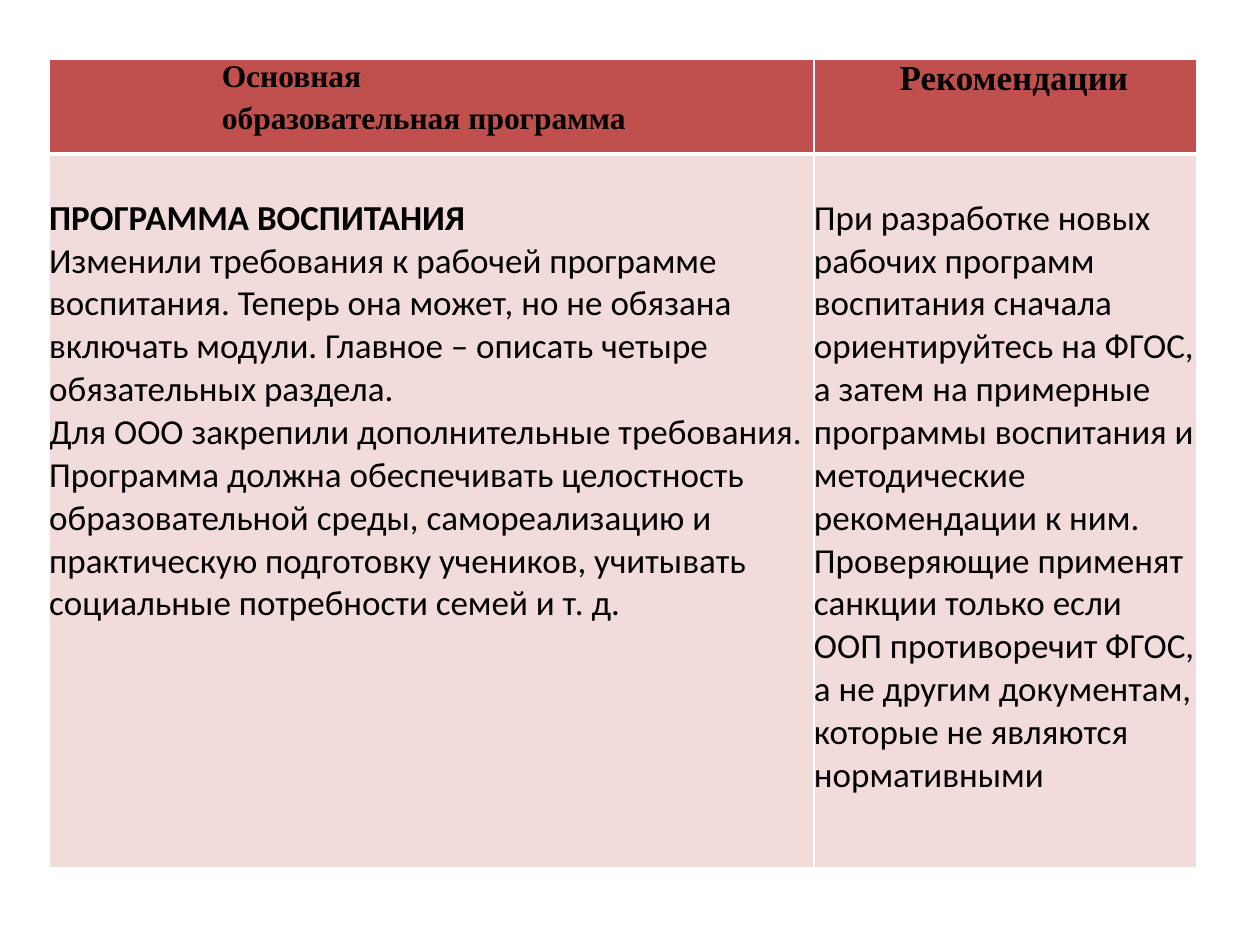
from lxml import etree
from pptx import Presentation
from pptx.dml.color import RGBColor
from pptx.enum.text import PP_ALIGN
from pptx.oxml.ns import qn
from pptx.util import Emu, Inches, Pt

LEFT, JUSTIFY = PP_ALIGN.LEFT, PP_ALIGN.JUSTIFY
WHITE, BLACK, RED, PINK = "FFFFFF", "000000", "C0504D", "F2DCDB"
SERIF, SANS = "Times New Roman", "Calibri"
THIN, THICK = 1, 3


def color(value):
    return RGBColor.from_string(value)


class SlideBuilder:
    """Holds the style and the current slide, and adds tables to it."""

    def __init__(self, deck):
        self.width, self.height = deck.slide_width, deck.slide_height
        self.slide = deck.slides.add_slide(deck.slide_layouts[6])

    def across(self, share):
        return Emu(round(self.width * share))

    def down(self, share):
        return Emu(round(self.height * share))

    def table(self, left, top, columns, rows):
        grid = self.slide.shapes.add_table(
            len(rows), len(columns), self.across(left), self.down(top),
            self.across(sum(columns)), self.down(sum(rows))).table
        for column, share in zip(grid.columns, columns):
            column.width = self.across(share)
        for row, share in zip(grid.rows, rows):
            row.height = self.down(share)
        return grid

    def border(self, cell, side, points):
        line = etree.SubElement(cell._tc.get_or_add_tcPr(), qn(f"a:ln{side}"), w=str(Pt(points)))
        fill = etree.SubElement(line, qn("a:solidFill"))
        etree.SubElement(fill, qn("a:srgbClr"), val=WHITE)

    def cell(self, cell, paragraphs, fill, borders, layout, font, top=0, indent=0):
        margins = dict(margin_left=0, margin_right=0, margin_top=Inches(top), margin_bottom=0)
        for name, value in margins.items():
            setattr(cell, name, value)
        for side, points in borders.items():
            self.border(cell, side, points)
        cell.fill.solid()
        cell.fill.fore_color.rgb = color(fill)
        cell.text = "\n".join(text for text, _ in paragraphs)
        for paragraph, (_, bold) in zip(cell.text_frame.paragraphs, paragraphs):
            for name, value in layout.items():
                setattr(paragraph, name, value)
            paragraph._p.get_or_add_pPr().set("marL", str(Inches(indent)))
            run_font = paragraph.runs[0].font
            for name, value in {**font, "bold": bold}.items():
                setattr(run_font, name, value)
            run_font.color.rgb = color(BLACK)


def main():
    deck = Presentation()
    deck.slide_width, deck.slide_height = Inches(10), Inches(7.5)
    builder = SlideBuilder(deck)
    grid = builder.table(0.039, 0.063, columns=(0.607, 0.304), rows=(0.1, 0.755))

    headings = [
        (["Основная", "образовательная программа"], 18, JUSTIFY, 1.37),
        (["Рекомендации"], 20, LEFT, 0.68),
    ]
    details = [
        [("ПРОГРАММА ВОСПИТАНИЯ", True),
         ("Изменили требования к рабочей программе воспитания. Теперь она может, "
          "но не обязана включать модули. Главное – описать четыре обязательных раздела.", False),
         ("Для ООО закрепили дополнительные требования. Программа должна обеспечивать "
          "целостность образовательной среды, самореализацию и практическую подготовку "
          "учеников, учитывать социальные потребности семей и т. д.", False)],
        [("При разработке новых рабочих программ воспитания сначала ориентируйтесь на ФГОС, "
          "а затем на примерные программы воспитания и методические рекомендации к ним.", False),
         ("Проверяющие применят санкции только если ООП противоречит ФГОС, а не другим "
          "документам, которые не являются нормативными", False)],
    ]
    heading_borders = dict(L=THIN, R=THIN, T=THIN, B=THICK)
    detail_borders = dict(L=THIN, R=THIN, T=THICK, B=THIN)
    for column, (lines, size, alignment, indent) in enumerate(headings):
        builder.cell(grid.cell(0, column), [(line, True) for line in lines], RED, heading_borders,
                     dict(alignment=alignment, space_before=Pt(4)),
                     dict(name=SERIF, size=Pt(size)), indent=indent)
    for column, paragraphs in enumerate(details):
        builder.cell(grid.cell(1, column), paragraphs, PINK, detail_borders,
                     dict(alignment=LEFT), dict(name=SANS, size=Pt(20)), top=0.34)
    deck.save("out.pptx")


if __name__ == "__main__":
    main()
